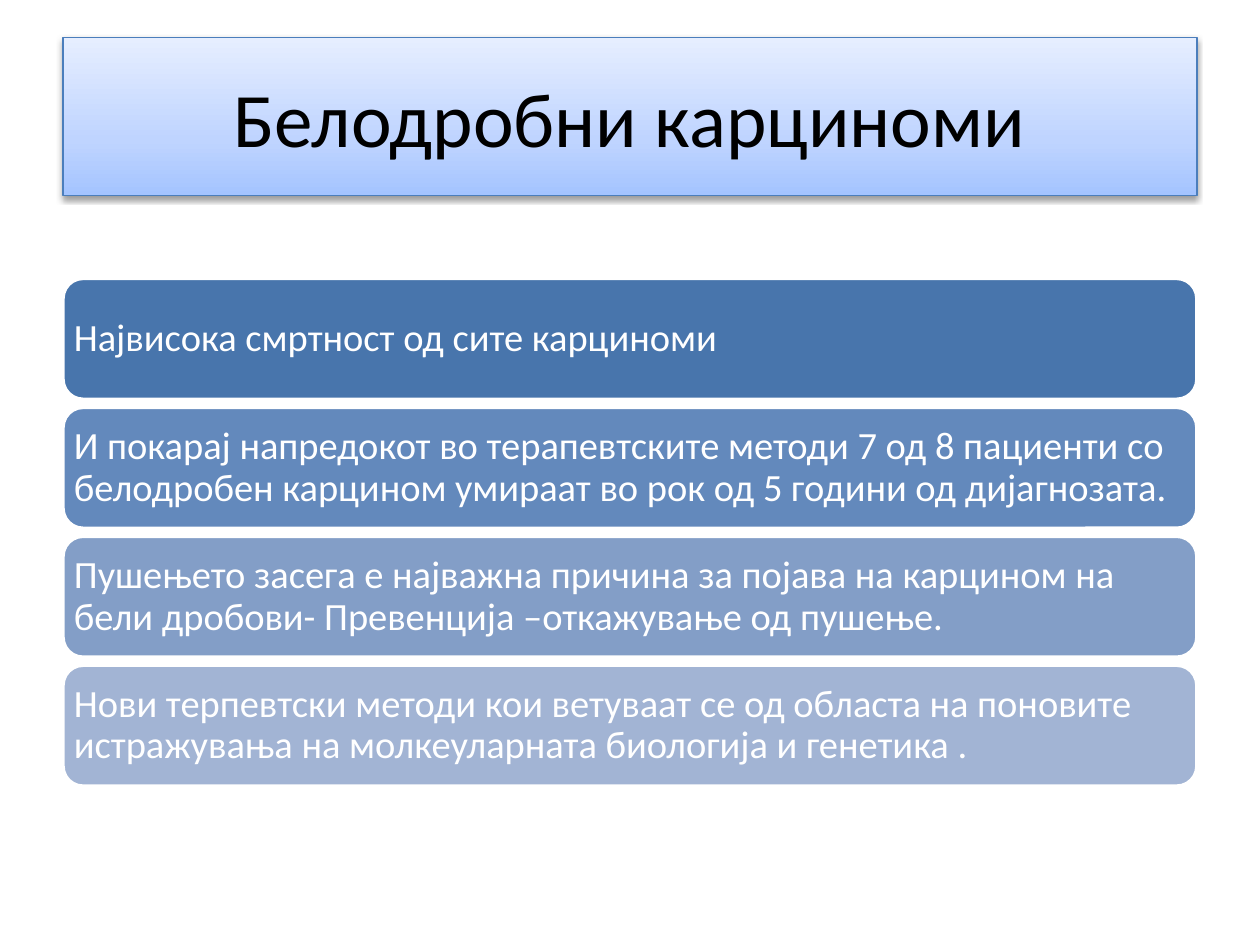
from lxml import etree
from pptx import Presentation
from pptx import util as u
from pptx.dml.color import RGBColor
from pptx.enum import shapes, text
from pptx.oxml import ns

BLACK = RGBColor(0x00, 0x00, 0x00)
WHITE = RGBColor(0xFF, 0xFF, 0xFF)
EDGE = RGBColor(0x4B, 0x7E, 0xBC)
FADE = [(0, RGBColor(0xA4, 0xC4, 0xFF)),
        (35, RGBColor(0xBF, 0xD4, 0xFF)),
        (100, RGBColor(0xE6, 0xEE, 0xFF))]

POINTS = [
    (RGBColor(0x48, 0x75, 0xAC), "Највисока смртност од сите карциноми"),
    (RGBColor(0x63, 0x89, 0xBC),
     "И покарај напредокот во терапевтските методи 7 од 8 пациенти со "
     "белодробен карцином умираат во рок од 5 години од дијагнозата."),
    (RGBColor(0x83, 0x9E, 0xC7),
     "Пушењето засега е најважна причина за појава на карцином на "
     "бели дробови- Превенција –откажување од пушење."),
    (RGBColor(0xA2, 0xB4, 0xD4),
     "Нови терпевтски методи кои ветуваат се од областа на поновите "
     "истражувања на молкеуларната биологија и генетика ."),
]
LEFT, WIDTH = 0.5, 9
TOP, LAST, HIGH = 2.21, 5.28, 0.96


def add(parent, tag, **attrs):
    """Append a DrawingML child element and return it."""
    return etree.SubElement(parent, ns.qn(tag), attrs)


class Deck:
    font = "Calibri"

    def __init__(self, slide):
        self.slide = slide

    def box(self, kind, top, height, edge, weight):
        shape = self.slide.shapes.add_shape(
            kind, u.Inches(LEFT), u.Inches(top),
            u.Inches(WIDTH), u.Inches(height))
        shape.shadow.inherit = False
        shape.line.color.rgb = edge
        shape.line.width = u.Pt(weight)
        return shape

    def label(self, shape, words, size, color, align):
        frame = shape.text_frame
        frame.word_wrap = True
        frame.vertical_anchor = text.MSO_ANCHOR.MIDDLE
        para = frame.paragraphs[0]
        para.text = words
        para.alignment = align
        para.font.name = self.font
        para.font.size = u.Pt(size)
        para.font.color.rgb = color
        return frame

    def fade(self, shape):
        """Fill from the bottom upwards with the FADE colours."""
        shape.fill.gradient()
        shape.fill.gradient_angle = 90
        stops = shape.element.spPr.find(".//" + ns.qn("a:gsLst"))
        stops.clear()
        for place, color in FADE:
            stop = add(stops, "a:gs", pos=str(place * 1000))
            add(stop, "a:srgbClr", val=str(color))

    def shade(self, shape):
        """Cast a soft shadow straight down."""
        effects = shape.element.spPr.find(ns.qn("a:effectLst"))
        cast = add(effects, "a:outerShdw", blurRad=str(u.Pt(3.1)),
                   dist=str(u.Pt(1.6)), dir="5400000", rotWithShape="0")
        add(add(cast, "a:srgbClr", val=str(BLACK)), "a:alpha", val="38000")

    def title(self, words):
        shape = self.box(shapes.MSO_SHAPE.RECTANGLE, 0.3, 1.25, EDGE, 0.75)
        self.fade(shape)
        self.shade(shape)
        self.label(shape, words, 44, BLACK, text.PP_ALIGN.CENTER)

    def bar(self, top, color, words):
        shape = self.box(shapes.MSO_SHAPE.ROUNDED_RECTANGLE, top, HIGH, WHITE, 2)
        shape.fill.solid()
        shape.fill.fore_color.rgb = color
        frame = self.label(shape, words, 22, WHITE, text.PP_ALIGN.LEFT)
        # The rounded corners inset the text a little further.
        frame.margin_left = frame.margin_right = u.Inches(0.04)
        frame.paragraphs[0].line_spacing = 0.9


def main():
    prs = Presentation()
    prs.slide_width, prs.slide_height = u.Inches(10), u.Inches(7.5)
    deck = Deck(prs.slides.add_slide(prs.slide_layouts[6]))
    deck.title("Белодробни карциноми")
    step = (LAST - TOP) / (len(POINTS) - 1)
    for row, (color, words) in enumerate(POINTS):
        deck.bar(TOP + row * step, color, words)
    prs.save("out.pptx")


if __name__ == "__main__":
    main()
